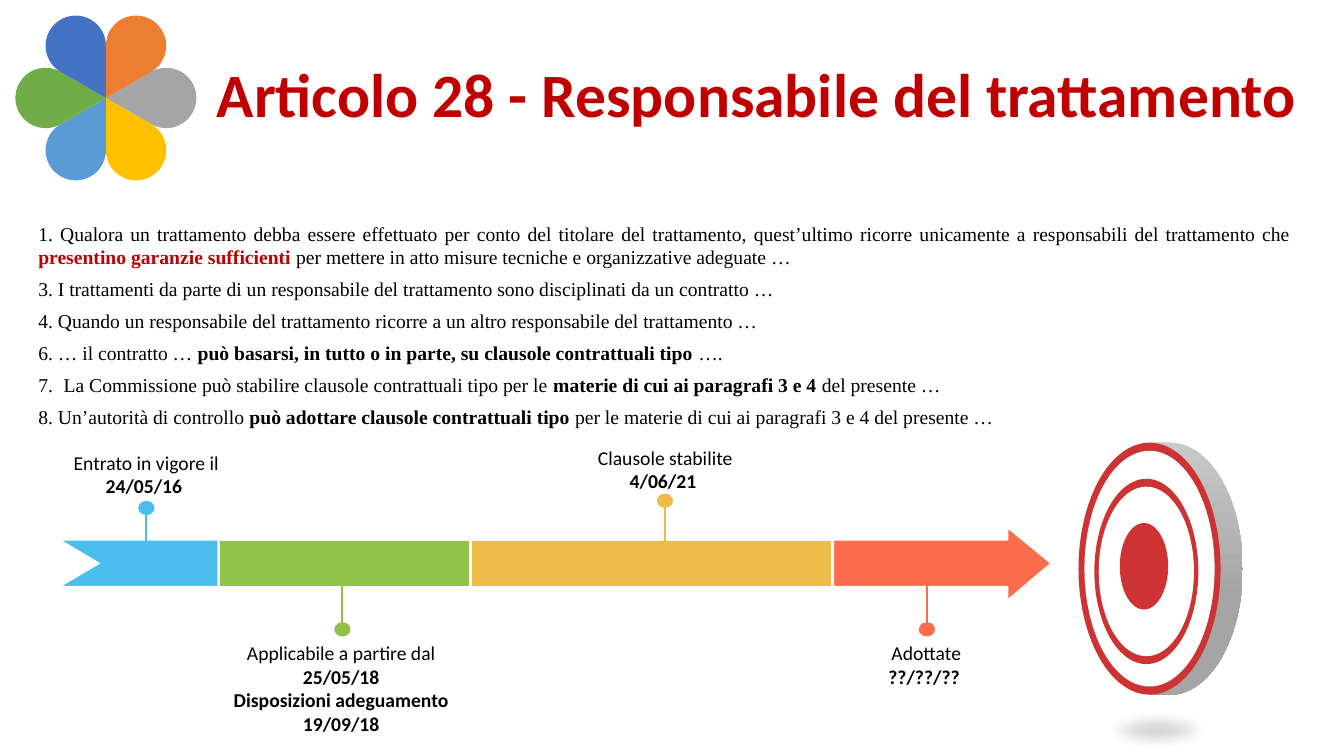
"""Build the slide on Article 28, the data processor, with its timeline."""
from dataclasses import dataclass
from math import cos, radians, sin

from lxml import etree
from pptx import Presentation
from pptx.dml.color import RGBColor
from pptx.enum import shapes, text
from pptx.oxml import ns
from pptx.util import Cm, Pt


@dataclass(frozen=True)
class Theme:
    """Colours, fonts and type sizes of the slide."""
    sans: str = "Calibri"
    serif: str = "Times New Roman"
    title_size: int = 44
    text_size: int = 14
    black: str = "000000"
    white: str = "FFFFFF"
    accent: str = "C00000"
    target: str = "CD3333"
    side_light: str = "C9C9C9"
    side_dark: str = "A5A5A5"
    blue: str = "4ABDEC"
    green: str = "90C149"
    yellow: str = "EEBA4A"
    coral: str = "FE6D4B"
    petals: tuple = ("A5A5A5", "FFC000", "5B9BD5", "70AD47", "4472C4", "ED7D31")


THEME = Theme()

TITLE = "Articolo 28 - Responsabile del trattamento"
CLAUSES = [
    [("1. Qualora un trattamento debba essere effettuato per conto del titolare del trattamento, "
      "quest’ultimo ricorre unicamente a responsabili del trattamento che ", ""),
     ("presentino garanzie sufficienti ", "accent"),
     ("per mettere in atto misure tecniche e organizzative adeguate …", "")],
    [("3. I trattamenti da parte di un responsabile del trattamento sono disciplinati "
      "da un contratto …", "")],
    [("4. Quando un responsabile del trattamento ricorre a un altro responsabile "
      "del trattamento …", "")],
    [("6. … il contratto … ", ""),
     ("può basarsi, in tutto o in parte, su clausole contrattuali tipo", "bold"), (" ….", "")],
    [("La Commissione può stabilire clausole contrattuali tipo per le ", ""),
     ("materie di cui ai paragrafi 3 e 4 ", "bold"), ("del presente …", "")],
    [("8. Un’autorità di controllo ", ""), ("può adottare clausole contrattuali tipo", "bold"),
     (" per le materie di cui ai paragrafi 3 e 4 del presente …", "")],
]
NUMBERED_CLAUSES = {4: 7}

BAR_TOP, BAR_BOTTOM, BAR_GAP = 13.61, 14.78, 0.05
BAR_MIDDLE = (BAR_TOP + BAR_BOTTOM) / 2
MILESTONES = [
    (3.69, 12.8, THEME.blue), (8.63, 15.86, THEME.green),
    (16.76, 12.62, THEME.yellow), (23.36, 15.86, THEME.coral),
]
LABELS = [
    ((1.55, 11.23, 4.27, 1.45), [[("Entrato in vigore il ", ""), ("24/05/16 ", "bold")]]),
    ((5.59, 16.03, 6.02, 2.64), [[("Applicabile a partire dal ", ""), ("25/05/18", "bold")],
                                 [("Disposizioni adeguamento", "bold")], [("19/09/18", "bold")]]),
    ((14.63, 11.1, 4.27, 1.45), [[("Clausole stabilite", "")], [("4/06/21 ", "bold")]]),
    ((21.21, 16.03, 4.27, 1.45), [[("Adottate", "")], [("??/??/?? ", "bold")]]),
]


def place(shape, left, top, width, height):
    """Move and size a shape, in centimetres."""
    shape.left, shape.top, shape.width, shape.height = map(Cm, (left, top, width, height))


def set_font(font, name, size, color, bold=None):
    """Apply face, size, colour and weight to a font."""
    font.name, font.size, font.bold = name, Pt(size), bold
    font.color.rgb = RGBColor.from_string(color)


def paint(shape, fill, outline=None):
    """Give a shape a flat fill and an optional thin outline."""
    shape.shadow.inherit = False
    shape.fill.solid()
    shape.fill.fore_color.rgb = RGBColor.from_string(fill)
    if outline:
        shape.line.color.rgb = RGBColor.from_string(outline)
        shape.line.width = Pt(0.75)
    else:
        shape.line.fill.background()
    return shape


def add_outline(page, points, fill, outline=None):
    """Draw a closed polygon through points given in centimetres."""
    corners = [(Cm(x), Cm(y)) for x, y in points]
    builder = page.shapes.build_freeform(*corners[0], scale=1.0)
    builder.add_line_segments(corners[1:], close=True)
    return paint(builder.convert_to_shape(), fill, outline)


def add_disc(page, x, y, width, height, fill):
    """Draw an ellipse around a centre."""
    disc = page.shapes.add_shape(shapes.MSO_SHAPE.OVAL, Cm(x - width / 2), Cm(y - height / 2),
                                 Cm(width), Cm(height))
    return paint(disc, fill)


def arc(x, y, rx, ry, first, last, step=5):
    """List points of an elliptical arc, with angles in degrees."""
    return [(x + rx * cos(radians(a)), y + ry * sin(radians(a)))
            for a in range(first, last + 1, step)]


def add_spans(para, spans):
    """Fill a paragraph with plain, bold or accented spans."""
    for words, style in spans:
        span = para.add_run()
        span.text = words
        if style:
            span.font.bold = True
        if style == "accent":
            span.font.color.rgb = RGBColor.from_string(THEME.accent)


def add_paragraphs(frame, rows):
    """Write one paragraph per row and yield each with its index."""
    for index, spans in enumerate(rows):
        para = frame.paragraphs[0] if index == 0 else frame.add_paragraph()
        add_spans(para, spans)
        yield index, para


def set_bullet(para, start=None):
    """Number a paragraph from start, or remove its bullet."""
    props = para._p.get_or_add_pPr()
    hang = Cm(0.64) if start else 0
    props.set("marL", str(hang))
    props.set("indent", str(-hang))
    if start:
        etree.SubElement(props, ns.qn("a:buFont"), typeface="+mj-lt")
        etree.SubElement(props, ns.qn("a:buAutoNum"), type="arabicPeriod", startAt=str(start))
    else:
        etree.SubElement(props, ns.qn("a:buNone"))


def fill_title(title):
    """Write the heading."""
    place(title, 5.21, 0.3, 28.27, 4.32)
    title.text_frame.text = TITLE
    title.text_frame.auto_size = text.MSO_AUTO_SIZE.NONE
    title.text_frame.vertical_anchor = text.MSO_ANCHOR.MIDDLE
    para = title.text_frame.paragraphs[0]
    para.alignment, para.line_spacing = text.PP_ALIGN.LEFT, 0.9
    set_font(para.font, THEME.sans, THEME.title_size, THEME.accent, True)


def fill_clauses(body):
    """Write the clauses of the article."""
    place(body, 0.71, 5.46, 32.11, 5.51)
    body.text_frame.auto_size = text.MSO_AUTO_SIZE.NONE
    for index, para in add_paragraphs(body.text_frame, CLAUSES):
        set_bullet(para, NUMBERED_CLAUSES.get(index))
        para.alignment = text.PP_ALIGN.JUSTIFY
        para.space_before, para.space_after = Pt(0), Pt(6)
        set_font(para.font, THEME.serif, THEME.text_size, THEME.black)


def add_flower(page, x, y, radius):
    """Draw six petals, each a circle drawn out to the flower's centre."""
    for index, color in enumerate(THEME.petals):
        turn = 60 * index
        bud = (x + 2 * radius * cos(radians(turn)), y + 2 * radius * sin(radians(turn)))
        add_outline(page, [(x, y), *arc(*bud, radius, radius, turn - 120, turn + 120)], color)


def add_target(page):
    """Draw the target with its side and ground shadow."""
    side = add_outline(page, [(28.98, 11.15), *arc(29.49, 14.33, 1.83, 3.18, -90, 90),
                              (28.98, 17.51)], THEME.side_dark)
    side.fill.gradient()
    side.fill.gradient_angle = 270
    stops = zip(side.fill.gradient_stops, (0, 0.61), (THEME.side_light, THEME.side_dark))
    for stop, position, color in stops:
        stop.position, stop.color.rgb = position, RGBColor.from_string(color)
    for x, y, width, height, color in [
        (28.97, 14.33, 3.58, 6.35, THEME.target), (28.97, 14.33, 3.28, 5.94, THEME.white),
        (28.89, 14.4, 2.62, 4.67, THEME.target), (28.89, 14.4, 2.4, 4.27, THEME.white),
        (28.83, 14.27, 1.22, 2.18, THEME.target),
    ]:
        add_disc(page, x, y, width, height, color)
    ground = add_disc(page, 29.17, 18.4, 3.58, 1.14, THEME.black)
    tint = ground._element.spPr.find(".//" + ns.qn("a:srgbClr"))
    etree.SubElement(tint, ns.qn("a:alpha"), val="20000")
    effects = ground._element.spPr.find(ns.qn("a:effectLst"))
    etree.SubElement(effects, ns.qn("a:softEdge"), rad=str(Cm(0.35)))


def add_bars(page):
    """Draw the four stretches of the timeline."""
    add_outline(page, [(1.52, BAR_TOP), (5.49, BAR_TOP), (5.49, BAR_BOTTOM), (1.52, BAR_BOTTOM),
                       (2.51, BAR_MIDDLE)], THEME.blue, THEME.white)
    for left, right, color in [(5.49, 11.84, THEME.green), (11.84, 20.96, THEME.yellow)]:
        bar = page.shapes.add_shape(shapes.MSO_SHAPE.RECTANGLE, Cm(left + BAR_GAP), Cm(BAR_TOP),
                                    Cm(right - left - BAR_GAP), Cm(BAR_BOTTOM - BAR_TOP))
        paint(bar, color, THEME.white)
    start, neck = 20.96 + BAR_GAP, 25.4
    add_outline(page, [(start, BAR_TOP), (neck, BAR_TOP), (neck, 13.31), (26.48, BAR_MIDDLE),
                       (neck, 15.11), (neck, BAR_BOTTOM), (start, BAR_BOTTOM)],
                THEME.coral, THEME.white)


def add_milestone(page, x, y, color):
    """Draw a dot and the stem that ties it to the timeline."""
    add_disc(page, x, y, 0.41, 0.36, color)
    end = BAR_TOP + BAR_GAP if y < BAR_TOP else BAR_BOTTOM - BAR_GAP
    stem = page.shapes.add_connector(shapes.MSO_CONNECTOR.STRAIGHT, Cm(x), Cm(y), Cm(x), Cm(end))
    stem.line.color.rgb = RGBColor.from_string(color)
    stem.line.width = Pt(1.5)
    etree.SubElement(stem._element.spPr, ns.qn("a:effectLst"))


def add_label(page, bounds, rows):
    """Write the centred caption of a milestone."""
    box = page.shapes.add_textbox(*map(Cm, bounds))
    box.text_frame.word_wrap = True
    for _, para in add_paragraphs(box.text_frame, rows):
        para.alignment = text.PP_ALIGN.CENTER
        set_font(para.font, THEME.sans, THEME.text_size, THEME.black)


def main():
    """Assemble and save the deck."""
    deck = Presentation()
    deck.slide_width, deck.slide_height = Cm(33.87), Cm(19.05)
    page = deck.slides.add_slide(deck.slide_layouts[1])
    fill_title(page.shapes.title)
    fill_clauses(page.placeholders[1])
    add_flower(page, 2.67, 2.47, 0.76)
    add_target(page)
    add_bars(page)
    for milestone in MILESTONES:
        add_milestone(page, *milestone)
    for bounds, rows in LABELS:
        add_label(page, bounds, rows)
    deck.save("out.pptx")


if __name__ == "__main__":
    main()
